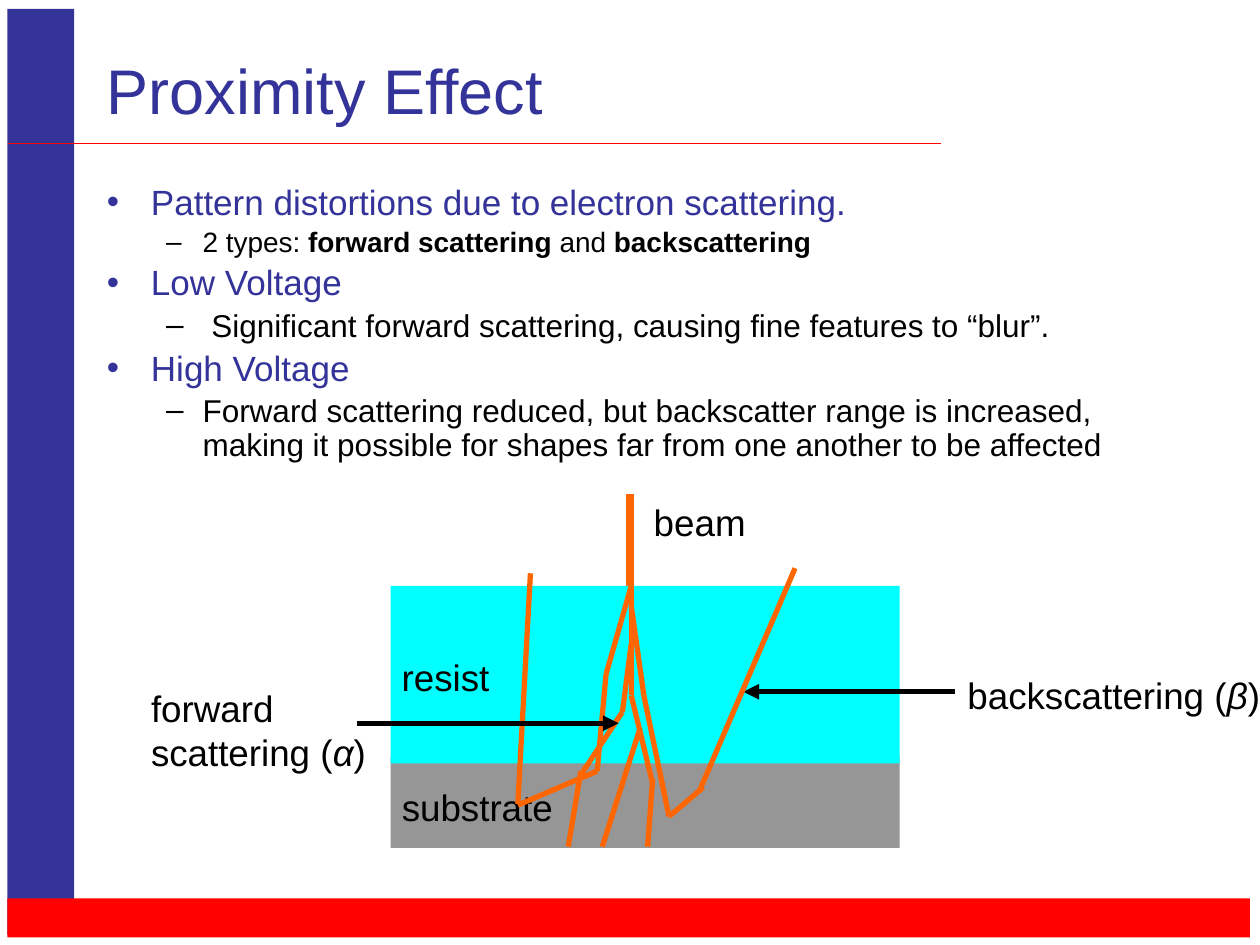
"""Build the Proximity Effect slide with its electron scattering diagram."""
from itertools import pairwise

from lxml.etree import SubElement
from pptx import Presentation
from pptx.dml.color import RGBColor
from pptx.enum.shapes import MSO_CONNECTOR as Link, MSO_SHAPE as Form
from pptx.enum.text import MSO_ANCHOR as Anchor
from pptx.oxml.ns import qn
from pptx.util import Inches, Pt

NAVY = RGBColor(0x33, 0x33, 0x99)
RED = RGBColor(0xFF, 0x02, 0x00)
BLACK = RGBColor(0, 0, 0)
ORANGE = RGBColor(0xFF, 0x66, 0x00)
GREY = RGBColor(0x96, 0x96, 0x96)
CYAN = RGBColor(0x00, 0xFF, 0xFF)
FONT = "Arial"

BODY = [
    (0, 20, [("Pattern distortions due to electron scattering.", "")]),
    (1, 16, [("2 types: ", ""), ("forward scattering ", "b"),
             ("and ", ""), ("backscattering", "b")]),
    (0, 20, [("Low Voltage", "")]),
    (1, 18, [(" Significant forward scattering, causing fine features to “blur”.", "")]),
    (0, 20, [("High Voltage", "")]),
    (1, 18, [("Forward scattering reduced, but backscatter range is increased, "
              "making it possible for shapes far from one another to be affected", "")]),
]
LEVELS = [("•", 0.35, 0.35, NAVY), ("–", 0.76, 0.29, BLACK)]

BACK = [
    [(6.31, 4.51), (5.55, 6.28)],
    [(4.21, 4.55), (4.11, 6.38)],
]
TRACKS = [
    [(5.01, 4.65), (5.01, 5.52), (5.18, 6.22)],
    [(5.01, 4.81), (5.11, 5.52), (5.31, 6.48), (5.58, 6.25)],
    [(5.01, 4.65), (4.81, 5.35), (4.74, 6.12), (4.11, 6.39)],
    [(5.01, 5.11), (4.94, 5.65), (4.61, 6.15)],
    [(5.08, 5.78), (4.78, 6.72)],
    [(4.61, 6.12), (4.51, 6.72)],
    [(5.18, 6.18), (5.14, 6.72)],
]


def add_bar(slide, box, fill):
    """Add a plain filled rectangle."""
    bar = slide.shapes.add_shape(Form.RECTANGLE, *map(Inches, box))
    bar.shadow.inherit = False
    bar.fill.solid()
    bar.fill.fore_color.rgb = fill
    bar.line.fill.background()


def add_line(slide, start, end, color, width, arrow=False):
    """Add a straight line, with an arrowhead at its end if wanted."""
    line = slide.shapes.add_connector(Link.STRAIGHT, *map(Inches, (*start, *end)))
    line.line.color.rgb = color
    line.line.width = Pt(width)
    if arrow:
        SubElement(line.line._get_or_add_ln(), qn("a:tailEnd"), type="triangle")
    SubElement(line._element.spPr, qn("a:effectLst"))


def add_path(slide, points):
    """Add an electron path as a chain of lines."""
    for start, end in pairwise(points):
        add_line(slide, start, end, ORANGE, 3)


def add_runs(para, runs, size, color):
    """Add runs of text, each with its style letters."""
    for text, style in runs:
        run = para.add_run()
        run.text = text
        font = run.font
        font.name, font.size = FONT, Pt(size)
        font.color.rgb = color
        font.bold, font.italic = "b" in style, "i" in style


def add_frame(slide, box, wrap):
    """Add a text box and return its frame."""
    frame = slide.shapes.add_textbox(*map(Inches, box)).text_frame
    frame.word_wrap = wrap
    return frame


def next_para(frame, index):
    """Return the first paragraph or a new one."""
    return frame.add_paragraph() if index else frame.paragraphs[0]


def add_label(slide, box, *lines):
    """Add a diagram label of one or more lines."""
    frame = add_frame(slide, box, False)
    for index, runs in enumerate(lines):
        add_runs(next_para(frame, index), runs, 21, BLACK)


def add_title(slide, text):
    """Add the slide title."""
    frame = add_frame(slide, (0.75, 0.17, 8.5, 1.08), True)
    frame.vertical_anchor = Anchor.MIDDLE
    add_runs(frame.paragraphs[0], [(text, "")], 36, NAVY)


def add_body(slide):
    """Add the two-level bullet list."""
    frame = add_frame(slide, (0.75, 1.42, 8.5, 2.54), True)
    for index, (level, size, runs) in enumerate(BODY):
        mark, left, hang, color = LEVELS[level]
        para = next_para(frame, index)
        para.level = level
        para.line_spacing = 0.9
        if index:
            para.space_before = Pt(0.2 * size)
        props = para._p.get_or_add_pPr()
        props.set("marL", str(Inches(left)))
        props.set("indent", str(-Inches(hang)))
        SubElement(props, qn("a:buFont"), typeface=FONT)
        SubElement(props, qn("a:buChar"), char=mark)
        add_runs(para, runs, size, color)


def add_diagram(slide):
    """Add the beam, the layers, the electron paths and their labels."""
    add_line(slide, (5, 3.92), (5, 4.71), ORANGE, 5)
    add_label(slide, (5.09, 3.92, 0.94, 0.45), [("beam", "")])
    add_bar(slide, (3.1, 6.01, 4.04, 0.72), GREY)
    add_bar(slide, (3.1, 4.65, 4.04, 1.41), CYAN)
    add_label(slide, (3.09, 5.15, 0.9, 0.45), [("resist", "")])
    add_label(slide, (3.09, 6.18, 1.41, 0.45), [("substrate", "")])
    add_line(slide, (7.58, 5.49), (5.9, 5.49), BLACK, 3, True)
    add_label(slide, (7.58, 5.29, 2.54, 0.45),
              [("backscattering (", ""), ("β", "i"), (")", "")])
    add_label(slide, (1.1, 5.39, 1.92, 0.81), [("forward", "")],
              [("scattering (", ""), ("α", "i"), (")", "")])
    for points in BACK + TRACKS:
        add_path(slide, points)
    add_line(slide, (2.83, 5.74), (4.91, 5.74), BLACK, 3, True)


def main():
    """Build and save the slide."""
    deck = Presentation()
    deck.slide_width, deck.slide_height = Inches(10), Inches(7.5)
    slide = deck.slides.add_slide(deck.slide_layouts[6])
    add_bar(slide, (0.06, 0.07, 0.53, 7.35), NAVY)
    add_bar(slide, (0.06, 7.13, 9.86, 0.31), RED)
    add_line(slide, (0.06, 1.14), (7.47, 1.14), RED, 1)
    add_title(slide, "Proximity Effect")
    add_body(slide)
    add_diagram(slide)
    deck.save("out.pptx")


if __name__ == "__main__":
    main()
